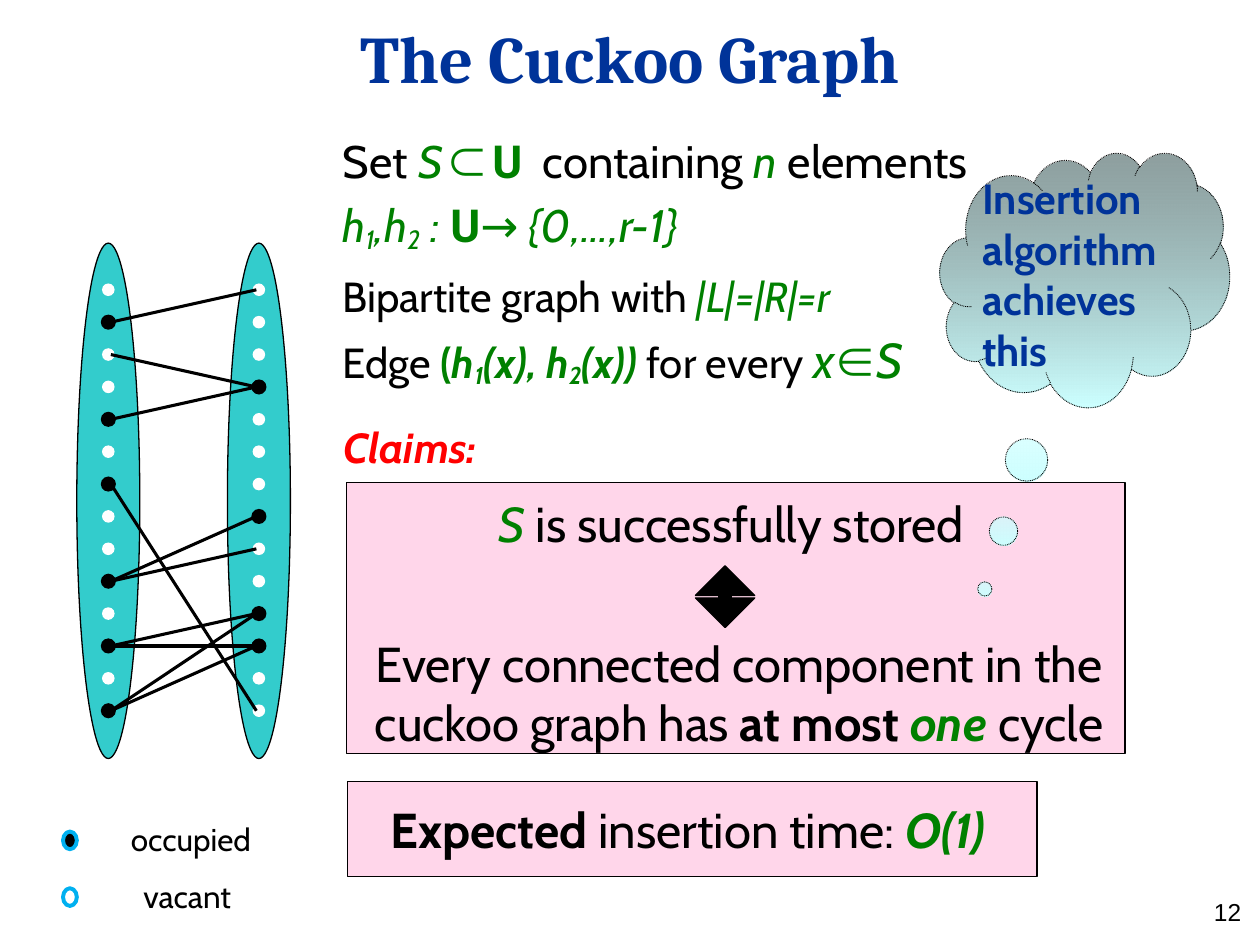
from lxml.etree import SubElement
from pptx import Presentation
from pptx.dml.color import RGBColor
from pptx.enum.dml import MSO_LINE
from pptx.enum.shapes import MSO_CONNECTOR, MSO_SHAPE as SHAPE
from pptx.enum.text import MSO_ANCHOR, PP_ALIGN as ALIGN
from pptx.oxml.ns import qn
from pptx.util import Inches, Pt

COLORS = {k: RGBColor.from_string(v) for k, v in {
    "black": "000000", "white": "FFFFFF", "navy": "003399", "green": "008000",
    "red": "FF0000", "teal": "33CCCC", "pink": "FF99CC", "sky": "00B0F0",
    "slate": "5E7676", "ice": "CCFFFF"}.items()}

prs = Presentation()
prs.slide_width, prs.slide_height = Inches(10), Inches(7.5)
s = prs.slides.add_slide(prs.slide_layouts[5])

# Grid of 100 columns by 75 rows
COL, ROW = prs.slide_width / 100, prs.slide_height / 75


def add_shape(kind, x, y, w, h, fill=None, line=None, weight=0.75):
    sp = s.shapes.add_shape(kind, int(x * COL), int(y * ROW), int(w * COL), int(h * ROW))
    sp.shadow.inherit = False
    if fill:
        sp.fill.solid()
        sp.fill.fore_color.rgb = COLORS[fill]
    else:
        sp.fill.background()
    if line:
        sp.line.color.rgb = COLORS[line]
        sp.line.width = Pt(weight)
    else:
        sp.line.fill.background()
    return sp


def add_text(x, y, w, h, size, paragraphs, align=ALIGN.LEFT, gap=0, font="Cabin"):
    """Each run is (text, style, size, font); style letters: g green, r red, b bold, i italic, s subscript."""
    tf = s.shapes.add_textbox(int(x * COL), int(y * ROW), int(w * COL), int(h * ROW)).text_frame
    tf.word_wrap = True
    for n, runs in enumerate(paragraphs):
        p = tf.add_paragraph() if n else tf.paragraphs[0]
        p.alignment = align
        p.space_before = Pt(gap if n else 0)
        for text, style, *special in runs:
            r = p.add_run()
            r.text = text
            r.font.size = Pt(special[0] if special else size)
            r.font.name = special[1] if len(special) > 1 else font
            r.font.bold, r.font.italic = "b" in style, "i" in style
            r.font.color.rgb = COLORS["green" if "g" in style else "red" if "r" in style else "black"]
            if "s" in style:
                r._r.get_or_add_rPr().set("baseline", "-15000")


# Title and slide number
title = s.shapes.title
title.left, title.top = 0, int(0.4 * ROW)
title.width, title.height = prs.slide_width, int(8.3 * ROW)
title.text_frame.text = "The Cuckoo Graph"
title.text_frame.vertical_anchor = MSO_ANCHOR.MIDDLE
p = title.text_frame.paragraphs[0]
p.alignment = ALIGN.CENTER
p.font.size, p.font.name, p.font.bold = Pt(38), "Cambria", True
p.font.color.rgb = COLORS["navy"]
add_text(76.2, 70.7, 23.3, 2.8, 14, [[("12", "")]], ALIGN.RIGHT, font="Arial")

# Definitions
add_text(26.2, 10.1, 56.9, 12.2, 26, [
    [("Set ", ""), ("S", "gi"), (" ", "gi", 10), ("⊂", "g", 24, "Noto Sans CJK KR"),
     (" ", "gi", 10), ("U", "gb", 26, "Roboto"), ("  containing ", ""), ("n", "gi"),
     (" elements", "")],
    [("h", "gi"), ("1", "gis"), (",h", "gi"), ("2", "gis"), (" : ", "gi"),
     ("U", "gb", 26, "Roboto"), ("→ {0,...,r-1}", "gi")],
], gap=5.2)

# Claim panels, with translucent pink fill
for x, y, w, h in ((27.5, 38.3, 61.8, 21.5), (27.6, 62, 54.7, 7.6)):
    panel = add_shape(SHAPE.RECTANGLE, x, y, w, h, "pink", "black")
    color = next(panel._element.spPr.iter(qn("a:srgbClr")))
    SubElement(color, qn("a:alpha"), val="40000")

add_text(25.6, 38.7, 65.7, 5.7, 28,
         [[("S", "gi"), (" is successfully stored ", "")]], ALIGN.CENTER)
add_text(25.8, 49.8, 65.7, 10.4, 28, [
    [("Every connected component in the cuckoo graph has ", ""), ("at most ", "b"),
     ("one", "gbi"), (" cycle", "")]], ALIGN.CENTER)
add_text(29.5, 63, 51.1, 5.7, 28, [
    [("Expected", "b"), (" insertion time: ", ""), ("O(1) ", "gbi")]], ALIGN.CENTER)
arrow = add_shape(SHAPE.UP_DOWN_ARROW, 55.2, 44.9, 4.7, 4.9, "black", "black")
arrow.adjustments[0], arrow.adjustments[1] = 0.5, 0.21

# Graph description and claims heading
add_text(26.2, 21, 49.2, 11.7, 24, [
    [("Bipartite graph with ", ""), ("|L|=|R|=r", "gi")],
    [("Edge ", ""), ("(", "gb"), ("h", "gbi"), ("1", "gbis"), ("(x), h", "gbi"),
     ("2", "gbis"), ("(x)) ", "gbi"), ("for every ", ""), ("x", "gi", 28),
     ("∈", "g", 24, "Noto Sans CJK SC"), ("S", "gi", 28)],
], gap=4.8)
add_text(26.3, 33, 14.3, 6.7, 24, [[("Claims:", "rbi")]])

# Bipartite graph: two sides of 14 cells, occupied ones listed by row
CELLS, FIRST, PITCH = 14, 23, 2.57
LEFT, RIGHT = 8.6, 20.55
OCCUPIED = {LEFT: (1, 4, 6, 9, 11, 13), RIGHT: (3, 7, 10, 11)}
EDGES = ((1, 0), (2, 3), (4, 3), (6, 13), (9, 7), (9, 8),
         (11, 10), (11, 11), (13, 11), (13, 10))
for x, occupied in OCCUPIED.items():
    add_shape(SHAPE.OVAL, x - 2.5, 19.3, 5, 40.9, "teal", "black")
    for cell in range(CELLS):
        size, fill = (1.2, "black") if cell in occupied else (1, "white")
        add_shape(SHAPE.OVAL, x - size / 2, FIRST + cell * PITCH - size / 2, size, size, fill)
for a, b in EDGES:
    edge = s.shapes.add_connector(
        MSO_CONNECTOR.STRAIGHT, int((LEFT + 0.2) * COL), int((FIRST + a * PITCH) * ROW),
        int((RIGHT - 0.2) * COL), int((FIRST + b * PITCH) * ROW))
    edge.line.color.rgb, edge.line.width = COLORS["black"], Pt(1.75)
    SubElement(edge._element.spPr, qn("a:effectLst"))

# Thought cloud
cloud = add_shape(SHAPE.CLOUD_CALLOUT, 74.6, 12.1, 23, 20.2, "ice", "black", 0.5)
cloud.adjustments[0], cloud.adjustments[1] = -0.345, 1.215
cloud.line.dash_style = MSO_LINE.ROUND_DOT
cloud.fill.gradient()
cloud.fill.gradient_angle = 270
for stop, name, position in zip(cloud.fill.gradient_stops, ("slate", "ice"), (0, 1)):
    stop.color.rgb, stop.position = COLORS[name], position
color = next(cloud._element.spPr.iter(qn("a:srgbClr")))
SubElement(color, qn("a:alpha"), val="70000")
tf = cloud.text_frame
tf.word_wrap, tf.vertical_anchor = True, MSO_ANCHOR.MIDDLE
tf.margin_left = tf.margin_right = tf.margin_top = tf.margin_bottom = Inches(0.02)
tf.text = "Insertion algorithm achieves this"
p = tf.paragraphs[0]
p.alignment = ALIGN.LEFT
p.font.size, p.font.name, p.font.bold = Pt(24), "Cabin", True
p.font.color.rgb = COLORS["navy"]

# Legend
for label, x, y, fill in (("occupied", 8.2, 64.6, "black"), ("vacant", 7.9, 69.1, None)):
    add_shape(SHAPE.OVAL, 5, y + 1.4, 1.1, 1.4, fill, "sky", 2.25)
    add_text(x, y, 13.9, 4, 18, [[(label, "")]], ALIGN.CENTER)

prs.save("out.pptx")
